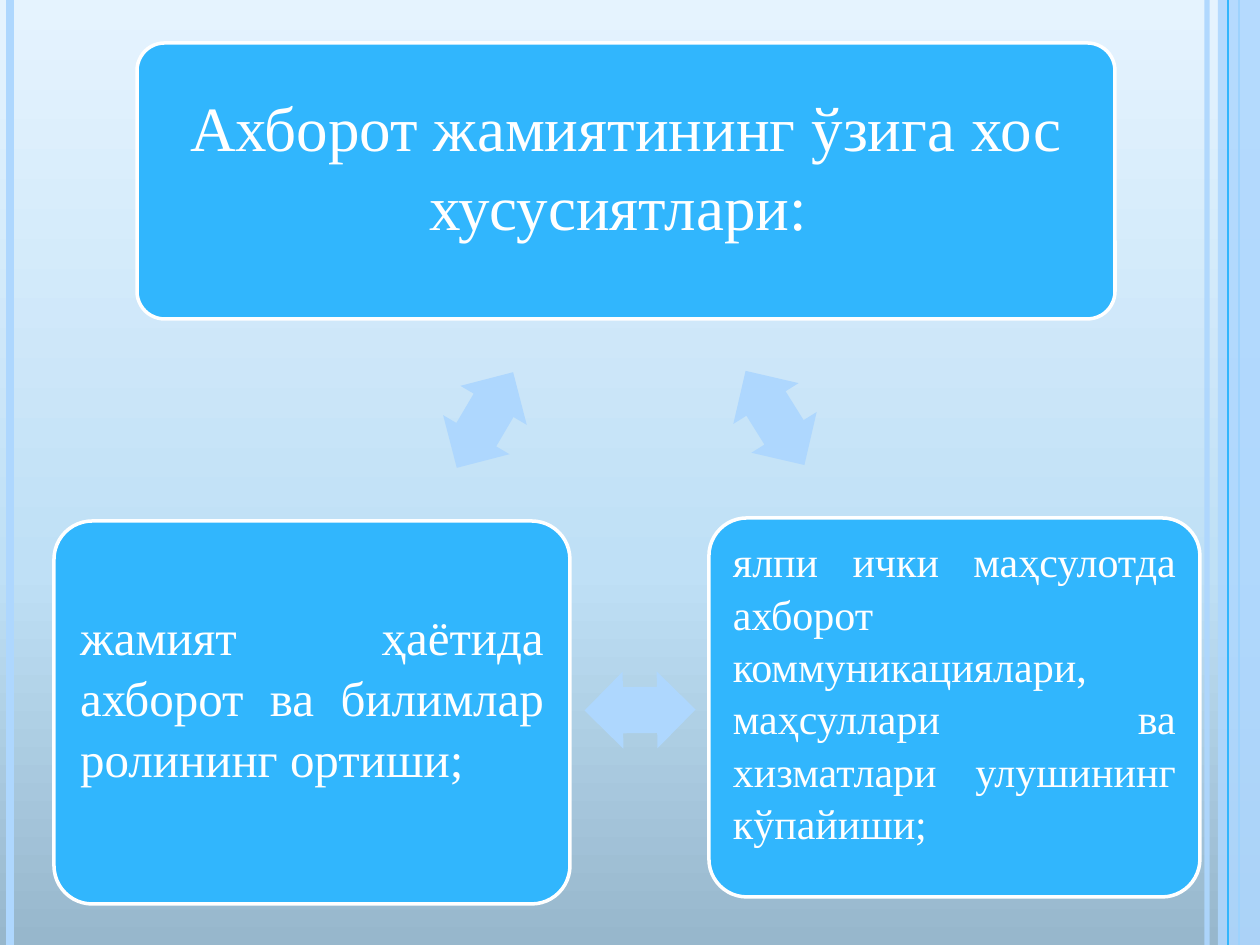
from copy import deepcopy

from lxml.etree import SubElement
from pptx import Presentation
from pptx.dml.color import RGBColor
from pptx.enum.shapes import MSO_CONNECTOR, MSO_SHAPE
from pptx.enum.text import MSO_ANCHOR, PP_ALIGN
from pptx.oxml.ns import qn
from pptx.util import Pt

SCALE = 914400 // 126
WIDTH, HEIGHT = 1260, 945
FONT = "Times New Roman"
BLUE, PALE, WHITE = "31B6FD", "AED7FE", "FFFFFF"
BACKDROP = [(0, "97B7CC"), (0.4, "BFE0F6"), (1, "E5F3FE")]

BACK_STRIPES = [(1207, PALE, 3, 93), (10, PALE, 4.5, 100), (1239, BLUE, 1.5, 100)]
FRONT_STRIPES = [(1228, BLUE, 0.75, 100)]
BAND = (1218, 0, 42, HEIGHT)

CARDS = [
    ("Ахборот жамиятининг ўзига хос хусусиятлари: ",
     (137, 43, 978, 276), 36, 19, PP_ALIGN.CENTER),
    ("ялпи ички маҳсулотда ахборот коммуникациялари, маҳсуллари ва "
     "хизматлари улушининг кўпайиши;",
     (709, 518, 491, 379), 24, 13, PP_ALIGN.JUSTIFY),
    ("жамият ҳаётида ахборот ва билимлар ролининг ортиши;",
     (54, 521, 516, 383), 28, 15, PP_ALIGN.JUSTIFY),
]
BOTTOM_GAP = 33

ARROW_W, ARROW_H = 111, 77
ARROWS = [(775, 418, 58), (640, 710, 179.5), (485, 420, 300.5)]


def px(value):
    return int(value * SCALE)


def rgb(color):
    return RGBColor.from_string(color)


def set_alpha(part, percent):
    color = next(part._element.iter(qn("a:srgbClr")))
    SubElement(color, qn("a:alpha")).set("val", str(percent * 1000))


def paint_background(slide):
    fill = slide.background.fill
    fill.gradient()
    fill.gradient_angle = 90
    stops = fill.gradient_stops
    first = next(slide._element.iter(qn("a:gs")))
    first.addnext(deepcopy(first))
    for stop, (position, color) in zip(fill.gradient_stops, BACKDROP):
        stop.position = position
        stop.color.rgb = rgb(color)


def add_stripe(slide, x, color, width, opacity):
    stripe = slide.shapes.add_connector(
        MSO_CONNECTOR.STRAIGHT, px(x), 0, px(x), px(HEIGHT))
    stripe.line.color.rgb = rgb(color)
    stripe.line.width = Pt(width)
    SubElement(stripe._element.spPr, qn("a:effectLst"))
    if opacity < 100:
        set_alpha(stripe, opacity)


def add_block(slide, kind, box, color):
    block = slide.shapes.add_shape(kind, *map(px, box))
    block.shadow.inherit = False
    block.fill.solid()
    block.fill.fore_color.rgb = rgb(color)
    block.line.fill.background()
    return block


def add_card(slide, text, box, size, inset, align):
    card = add_block(slide, MSO_SHAPE.ROUNDED_RECTANGLE, box, BLUE)
    card.adjustments[0] = 0.1
    card.line.color.rgb = rgb(WHITE)
    card.line.width = Pt(2)
    frame = card.text_frame
    frame.word_wrap = True
    frame.vertical_anchor = MSO_ANCHOR.MIDDLE
    frame.margin_left = frame.margin_right = frame.margin_top = px(inset)
    frame.margin_bottom = px(inset + BOTTOM_GAP)
    frame.text = text
    paragraph = frame.paragraphs[0]
    paragraph.alignment = align
    paragraph.line_spacing = 1.04
    font = paragraph.runs[0].font
    font.name = FONT
    font.size = Pt(size)
    font.color.rgb = rgb(WHITE)


def add_arrow(slide, x, y, angle):
    box = (x - ARROW_W / 2, y - ARROW_H / 2, ARROW_W, ARROW_H)
    arrow = add_block(slide, MSO_SHAPE.LEFT_RIGHT_ARROW, box, PALE)
    arrow.adjustments[0] = 0.6
    arrow.adjustments[1] = 0.5
    arrow.rotation = angle


def main():
    deck = Presentation()
    deck.slide_width, deck.slide_height = px(WIDTH), px(HEIGHT)
    slide = deck.slides.add_slide(deck.slide_layouts[6])
    paint_background(slide)
    for stripe in BACK_STRIPES:
        add_stripe(slide, *stripe)
    set_alpha(add_block(slide, MSO_SHAPE.RECTANGLE, BAND, PALE), 87)
    for stripe in FRONT_STRIPES:
        add_stripe(slide, *stripe)
    for card, arrow in zip(CARDS, ARROWS):
        add_card(slide, *card)
        add_arrow(slide, *arrow)
    deck.save("out.pptx")


if __name__ == "__main__":
    main()
